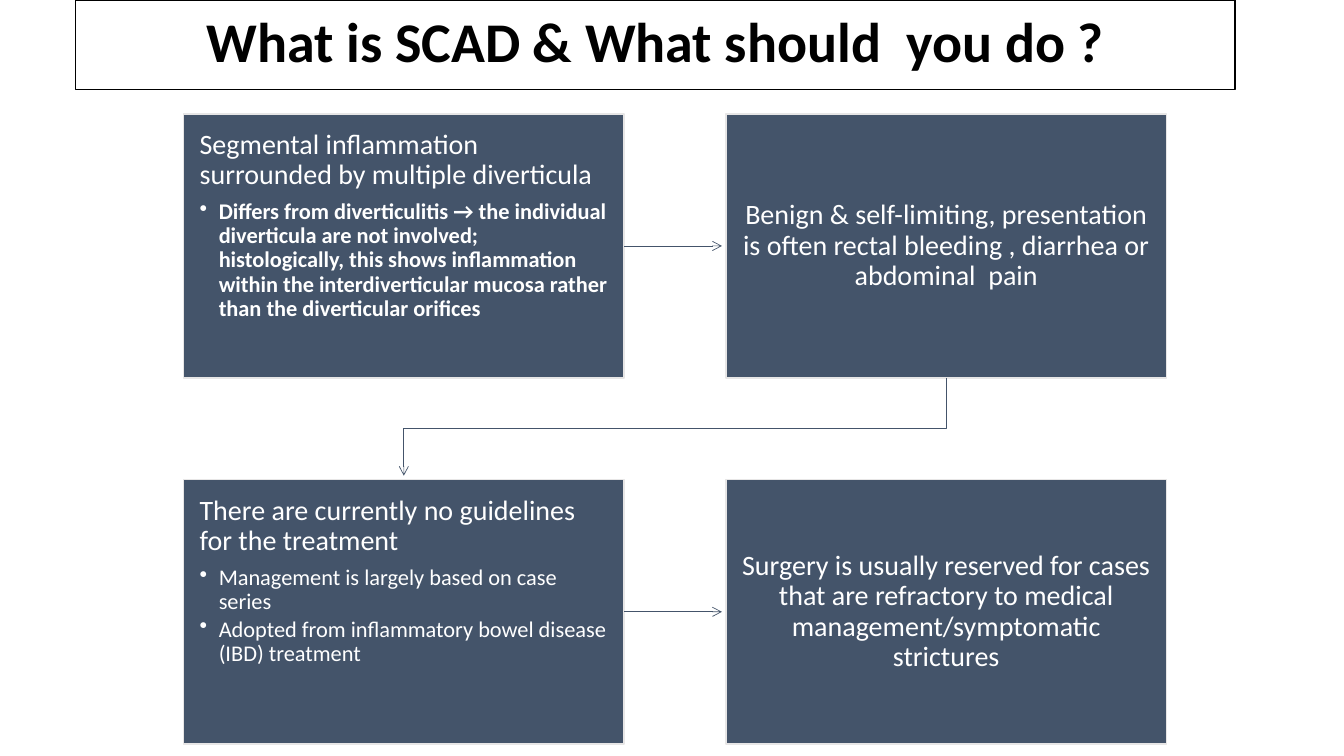
from pptx import Presentation
from pptx import util as u
from pptx.dml.color import RGBColor
from pptx.enum import shapes, text
from pptx.oxml.ns import qn
from lxml import etree

COLORS = {"box": "44546A", "edge": "E7E6E6", "white": "FFFFFF", "black": "000000"}
FONT = "Calibri"

# Grid of boxes, in inches
LEFT, TOP = 1.82, 1.13
BOX_W, BOX_H = 4.37, 2.62
COL_STEP, ROW_STEP = 5.38, 3.63
ARROW_GAP = 0.04

# Each step: column, row, heading, bullets, bold bullets
STEPS = [
    (0, 0, "Segmental inflammation  surrounded by multiple diverticula",
     ["Differs from diverticulitis → the individual diverticula are not involved; "
      "histologically, this shows inflammation within the interdiverticular mucosa "
      "rather than the diverticular orifices"], True),
    (1, 0, "Benign & self-limiting, presentation is often rectal bleeding , "
           "diarrhea or abdominal  pain", [], False),
    (0, 1, "There are currently no guidelines for the treatment",
     ["Management is largely based on case series",
      "Adopted from inflammatory bowel disease (IBD) treatment"], False),
    (1, 1, "Surgery is usually reserved for cases that are refractory to medical "
           "management/symptomatic strictures", [], False),
]


def color(name):
    return RGBColor.from_string(COLORS[name])


def style_shape(sp, fill, line):
    sp.fill.solid()
    sp.fill.fore_color.rgb = color(fill)
    sp.line.color.rgb = color(line)
    sp.line.width = u.Pt(1)


def add_run(p, words, size, ink, bold=False):
    p.line_spacing = 0.9
    r = p.add_run()
    r.text = words
    r.font.name, r.font.size, r.font.bold = FONT, u.Pt(size), bold
    r.font.color.rgb = color(ink)


def add_bullet(p):
    p.level = 1
    pPr = p._p.get_or_add_pPr()
    pPr.set("marL", str(u.Inches(0.19)))
    pPr.set("indent", str(-u.Inches(0.19)))
    etree.SubElement(pPr, qn("a:buChar")).set("char", "•")


def style_arrow(line):
    line.color.rgb = color("box")
    line.width = u.Pt(0.5)
    etree.SubElement(line._get_or_add_ln(), qn("a:tailEnd")).set("type", "arrow")


def add_title(s, x, y, w, h):
    sp = s.shapes.title
    sp.left, sp.top, sp.width, sp.height = (u.Inches(v) for v in (x, y, w, h))
    style_shape(sp, "white", "black")
    tf = sp.text_frame
    tf.auto_size = text.MSO_AUTO_SIZE.NONE
    tf.vertical_anchor = text.MSO_ANCHOR.MIDDLE
    p = tf.paragraphs[0]
    p.alignment = text.PP_ALIGN.CENTER
    add_run(p, "What is SCAD & What should  you do ?", 40, "black", True)


def add_step(s, x, y, w, h, heading, bullets, bold):
    sp = s.shapes.add_shape(shapes.MSO_SHAPE.RECTANGLE,
                            *(u.Inches(v) for v in (x, y, w, h)))
    sp.shadow.inherit = False
    style_shape(sp, "box", "edge")
    tf = sp.text_frame
    tf.word_wrap = True
    tf.margin_left = tf.margin_right = tf.margin_top = tf.margin_bottom = u.Inches(0.16)
    tf.vertical_anchor = text.MSO_ANCHOR.TOP if bullets else text.MSO_ANCHOR.MIDDLE
    p = tf.paragraphs[0]
    p.alignment = text.PP_ALIGN.LEFT if bullets else text.PP_ALIGN.CENTER
    p.space_after = u.Pt(7)
    add_run(p, heading, 20, "white")
    for words in bullets:
        p = tf.add_paragraph()
        p.alignment = text.PP_ALIGN.LEFT
        p.space_after = u.Pt(2.4)
        add_run(p, words, 16, "white", bold)
        add_bullet(p)
    return sp


def add_row_arrow(s, start, end):
    y = start.top + start.height // 2
    c = s.shapes.add_connector(shapes.MSO_CONNECTOR.STRAIGHT, start.left + start.width, y,
                               end.left - u.Inches(ARROW_GAP), y)
    c.begin_connect(start, 3)
    style_arrow(c.line)
    etree.SubElement(c._element.spPr, qn("a:effectLst"))


def add_return_arrow(s, start, end):
    x1, x2 = (b.left + b.width // 2 for b in (start, end))
    y1, y2 = start.top + start.height, end.top - u.Inches(ARROW_GAP)
    bend = (y1 + end.top) // 2
    builder = s.shapes.build_freeform(x1, y1)
    builder.add_line_segments([(x1, bend), (x2, bend), (x2, y2)], close=False)
    sp = builder.convert_to_shape()
    sp.shadow.inherit = False
    sp.fill.background()
    style_arrow(sp.line)


def add_flow(s, x, y):
    boxes = [add_step(s, x + col * COL_STEP, y + row * ROW_STEP, BOX_W, BOX_H, *content)
             for col, row, *content in STEPS]
    add_row_arrow(s, boxes[0], boxes[1])
    add_return_arrow(s, boxes[1], boxes[2])
    add_row_arrow(s, boxes[2], boxes[3])


def main():
    prs = Presentation()
    prs.slide_width, prs.slide_height = u.Inches(13.33), u.Inches(7.5)
    s = prs.slides.add_slide(prs.slide_layouts[5])
    add_title(s, 0.75, 0, 11.5, 0.89)
    add_flow(s, LEFT, TOP)
    prs.save("out.pptx")


if __name__ == "__main__":
    main()
